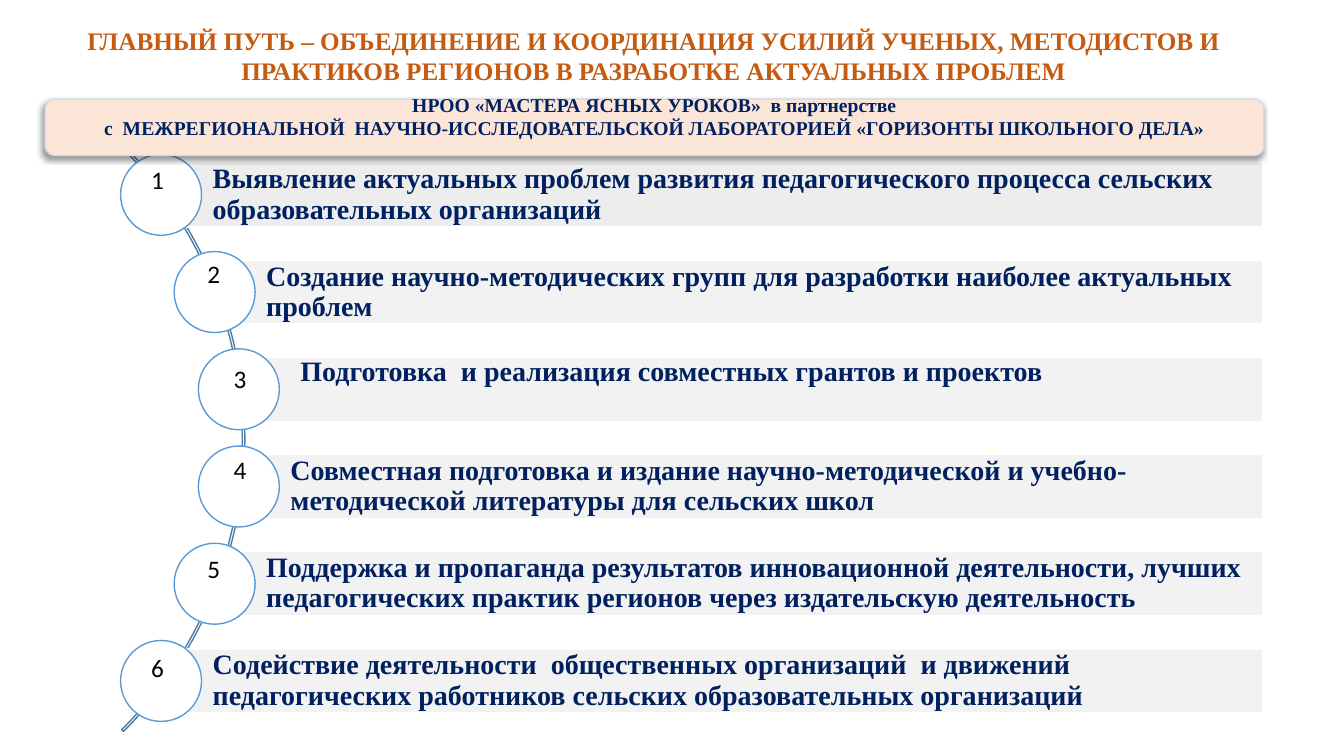
import dataclasses
import typing

import lxml.etree
import pptx
import pptx.dml.color
import pptx.enum.shapes
import pptx.enum.text
import pptx.oxml.ns
import pptx.util

Cm = pptx.util.Cm
Pt = pptx.util.Pt
Kind = pptx.enum.shapes.MSO_SHAPE
Align = pptx.enum.text.PP_ALIGN
Anchor = pptx.enum.text.MSO_ANCHOR

COLORS = {
    "navy": "002060",
    "orange": "C55A11",
    "black": "000000",
    "white": "FFFFFF",
    "peach": "FBE5D6",
    "banner_edge": "D6DCE5",
    "arc": "497CAB",
    "circle_edge": "5B9BD5",
    "first_bar": "EDEDED",
    "bar": "F2F2F2",
}
SERIF = "Times New Roman"
FIRST_TOP, PITCH = 4.1, 2.45
BAR_HEIGHT, BAR_RIGHT = 1.62, 31.82
DIAMETER = 2.04
DEFAULT_INSETS = (0.25, 0.13, 0.25, 0.13)
BAR_INSETS = (1.3, 0.15, 0.15, 0.15)


class Box(typing.NamedTuple):
    left: float
    top: float
    width: float
    height: float

    def lengths(self) -> list[pptx.util.Length]:
        return [Cm(value) for value in self]


@dataclasses.dataclass(frozen=True)
class Task:
    text: str
    bar_left: float
    number_left: float
    number_top: float
    fill: str = "bar"
    text_box: Box | None = None


TASKS = [
    Task("Выявление актуальных проблем развития педагогического процесса сельских "
         "образовательных организаций", 4.06, 3.56, 4.01, fill="first_bar"),
    Task("Создание научно-методических групп для разработки наиболее актуальных проблем",
         5.41, 4.98, 6.38),
    Task("Подготовка  и реализация совместных грантов и проектов",
         6.02, 5.64, 9.02, text_box=Box(7.32, 8.79, 23.5, 1.88)),
    Task("Совместная подготовка и издание научно-методической и учебно-методической "
         "литературы для сельских школ", 6.02, 5.64, 11.33),
    Task("Поддержка и пропаганда результатов инновационной деятельности, лучших "
         "педагогических практик регионов через издательскую деятельность",
         5.41, 4.98, 13.82),
    Task("Содействие деятельности  общественных организаций  и движений  "
         "педагогических работников сельских образовательных организаций",
         4.06, 3.56, 16.31),
]


def rgb(name: str) -> pptx.dml.color.RGBColor:
    return pptx.dml.color.RGBColor.from_string(COLORS[name])


def write(shape, text: str, *, size: float, color: str = "navy", font: str = SERIF,
          bold: bool = True, align=Align.LEFT, anchor=Anchor.TOP,
          insets: tuple = DEFAULT_INSETS, spacing: float = 1.0) -> None:
    frame = shape.text_frame
    frame.word_wrap = True
    frame.vertical_anchor = anchor
    (frame.margin_left, frame.margin_top,
     frame.margin_right, frame.margin_bottom) = [Cm(inset) for inset in insets]
    frame.text = text
    for paragraph in frame.paragraphs:
        paragraph.alignment = align
        paragraph.line_spacing = spacing
        paragraph.font.size = Pt(size)
        for run in paragraph.runs:
            run.font.size = Pt(size)
            run.font.name = font
            run.font.bold = bold
            run.font.color.rgb = rgb(color)


def add_figure(slide, kind, box: Box, line: str, fill: str | None = None):
    figure = slide.shapes.add_shape(kind, *box.lengths())
    figure.shadow.inherit = False
    figure.line.color.rgb = rgb(line)
    figure.line.width = Pt(1)
    if fill:
        figure.fill.solid()
        figure.fill.fore_color.rgb = rgb(fill)
    else:
        figure.fill.background()
    return figure


def add_label(slide, box: Box, text: str, **style) -> None:
    write(slide.shapes.add_textbox(*box.lengths()), text, **style)


def add_arc(slide) -> None:
    arc = add_figure(slide, Kind.BLOCK_ARC, Box(-14.71, 0.61, 20.88, 20.88), "arc")
    for index, value in enumerate((189, 27, 0.003)):
        arc.adjustments[index] = value


def add_task(slide, task: Task, index: int) -> None:
    top = FIRST_TOP + index * PITCH
    bar = add_figure(
        slide, Kind.RECTANGLE,
        Box(task.bar_left, top, BAR_RIGHT - task.bar_left, BAR_HEIGHT),
        "white", task.fill)
    if task.text_box:
        add_label(slide, task.text_box, task.text, size=20)
    else:
        write(bar, task.text, size=20, anchor=Anchor.MIDDLE,
              insets=BAR_INSETS, spacing=0.9)
    circle = Box(task.bar_left - DIAMETER / 2, top + (BAR_HEIGHT - DIAMETER) / 2,
                 DIAMETER, DIAMETER)
    add_figure(slide, Kind.OVAL, circle, "circle_edge", "white")
    add_label(slide, Box(task.number_left, task.number_top, 1.1, 1.02), str(index + 1),
              size=18, color="black", font="Calibri", bold=False)


def add_outer_shadow(shape) -> None:
    qn = pptx.oxml.ns.qn
    effects = shape.element.spPr.find(qn("a:effectLst"))
    shadow = lxml.etree.SubElement(
        effects, qn("a:outerShdw"), blurRad=str(Pt(4)), dist=str(Pt(3)),
        dir=str(135 * 60000), algn="tr", rotWithShape="0")
    tint = lxml.etree.SubElement(shadow, qn("a:srgbClr"), val=COLORS["black"])
    lxml.etree.SubElement(tint, qn("a:alpha"), val="40000")


def add_banner(slide) -> None:
    banner = add_figure(slide, Kind.ROUNDED_RECTANGLE, Box(1.14, 2.5, 30.71, 1.42),
                        "banner_edge", "peach")
    add_outer_shadow(banner)
    write(banner,
          "НРОО «МАСТЕРА ЯСНЫХ УРОКОВ»  в партнерстве\n"
          "с  МЕЖРЕГИОНАЛЬНОЙ  НАУЧНО-ИССЛЕДОВАТЕЛЬСКОЙ ЛАБОРАТОРИЕЙ "
          "«ГОРИЗОНТЫ ШКОЛЬНОГО ДЕЛА»",
          size=14, align=Align.CENTER, anchor=Anchor.MIDDLE,
          insets=(0.25, 0.13, 0.25, 0.7))


def main() -> None:
    presentation = pptx.Presentation()
    presentation.slide_width = Cm(33.87)
    presentation.slide_height = Cm(19.05)
    slide = presentation.slides.add_slide(presentation.slide_layouts[6])
    add_arc(slide)
    for index, task in enumerate(TASKS):
        add_task(slide, task, index)
    add_banner(slide)
    add_label(slide, Box(0.97, 0.51, 31.01, 1.8),
              "ГЛАВНЫЙ ПУТЬ – ОБЪЕДИНЕНИЕ И КООРДИНАЦИЯ УСИЛИЙ УЧЕНЫХ, МЕТОДИСТОВ И "
              "ПРАКТИКОВ РЕГИОНОВ В РАЗРАБОТКЕ АКТУАЛЬНЫХ ПРОБЛЕМ",
              size=18, color="orange", align=Align.CENTER)
    presentation.save("out.pptx")


if __name__ == "__main__":
    main()
